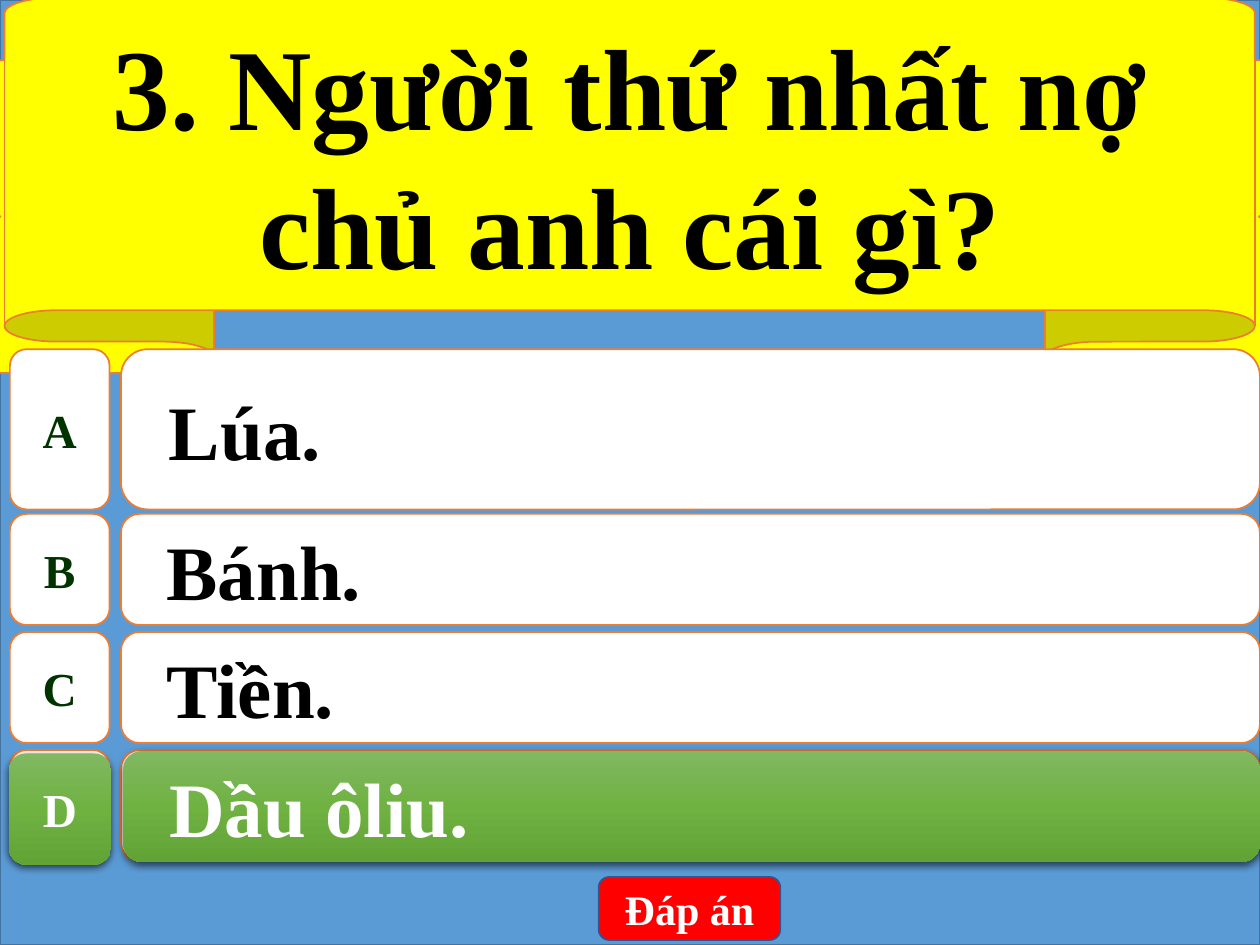
from dataclasses import dataclass

from lxml.etree import SubElement
from pptx import Presentation
from pptx.dml.color import RGBColor
from pptx.enum.shapes import MSO_SHAPE
from pptx.enum.text import MSO_ANCHOR, PP_ALIGN
from pptx.oxml.ns import qn
from pptx.util import Cm, Pt


@dataclass(frozen=True)
class Theme:
    font: str = "Times New Roman"
    sky: str = "5B9BD5"
    sky_edge: str = "43739E"
    yellow: str = "FFFF00"
    orange: str = "ED7D31"
    white: str = "FFFFFF"
    black: str = "000000"
    dark_green: str = "003300"
    red: str = "FF0000"
    button_edge: str = "325491"
    greens: tuple = ((0, "81B861"), (50, "6FB242"), (100, "62A336"))
    question_size: int = 66
    answer_size: int = 44
    letter_size: int = 27
    button_size: int = 24


class QuizSlide:
    def __init__(self, slide, theme):
        self.slide = slide
        self.theme = theme

    def shape(self, kind, box, fill, line=None, adjustments=()):
        sp = self.slide.shapes.add_shape(kind, *(Cm(v) for v in box))
        sp.shadow.inherit = False
        for i, value in enumerate(adjustments):
            sp.adjustments[i] = value
        sp.fill.solid()
        sp.fill.fore_color.rgb = RGBColor.from_string(fill)
        if line:
            sp.line.color.rgb = RGBColor.from_string(line)
            sp.line.width = Pt(1)
        else:
            sp.line.fill.background()
        return sp

    def label(self, sp, text, size, color, align=PP_ALIGN.CENTER, wrap=True):
        tf = sp.text_frame
        tf.text = text
        tf.word_wrap = wrap
        tf.vertical_anchor = MSO_ANCHOR.MIDDLE
        p = tf.paragraphs[0]
        p.alignment = align
        for r in p.runs:
            r.font.name = self.theme.font
            r.font.size = Pt(size)
            r.font.bold = True
            r.font.color.rgb = RGBColor.from_string(color)
        return p

    def background(self, width, height):
        t = self.theme
        self.shape(MSO_SHAPE.RECTANGLE, (0, 0, width, height), t.sky, t.sky_edge)

    def question(self, box, text):
        t = self.theme
        sp = self.shape(MSO_SHAPE.UP_RIBBON, box, t.yellow, t.orange, (0.167, 0.745))
        self.label(sp, text, t.question_size, t.black)

    def letter(self, box, text, lit=False):
        t = self.theme
        sp = self.shape(MSO_SHAPE.FLOWCHART_ALTERNATE_PROCESS, box,
                        t.white, None if lit else t.orange)
        if lit:
            self.glow(sp)
        if text:
            self.label(sp, text, t.letter_size, t.white if lit else t.dark_green,
                       wrap=False)

    def answer(self, box, text, lit=False):
        t = self.theme
        sp = self.shape(MSO_SHAPE.ROUNDED_RECTANGLE, box,
                        t.white, None if lit else t.orange, (0.167,))
        if lit:
            self.glow(sp)
        if text:
            p = self.label(sp, text, t.answer_size, t.white if lit else t.black,
                           PP_ALIGN.LEFT)
            p.level = 1
            pPr = p._p.get_or_add_pPr()
            pPr.set("marL", str(Cm(1.27)))
            pPr.set("indent", str(Cm(-0.71)))

    def glow(self, sp):
        sp.fill.gradient()
        sp.fill.gradient_angle = 270
        spPr = sp._element.spPr
        stops = spPr.find(qn("a:gradFill")).find(qn("a:gsLst"))
        for gs in list(stops):
            stops.remove(gs)
        for pos, color in self.theme.greens:
            gs = SubElement(stops, qn("a:gs"), pos=str(pos * 1000))
            SubElement(gs, qn("a:srgbClr"), val=color)
        shadow = SubElement(spPr.find(qn("a:effectLst")), qn("a:outerShdw"),
                            blurRad=str(Pt(4.5)), dist=str(Pt(1.5)),
                            dir="5400000", algn="ctr", rotWithShape="0")
        clr = SubElement(shadow, qn("a:srgbClr"), val=self.theme.black)
        SubElement(clr, qn("a:alpha"), val="63000")

    def button(self, box, text):
        t = self.theme
        sp = self.shape(MSO_SHAPE.ROUNDED_RECTANGLE, box, t.red, t.button_edge)
        self.label(sp, text, t.button_size, t.white)


def main():
    prs = Presentation()
    prs.slide_width, prs.slide_height = Cm(25.4), Cm(19.05)
    s = QuizSlide(prs.slides.add_slide(prs.slide_layouts[6]), Theme())

    s.background(25.4, 19.05)
    s.question((-4.22, -0.05, 33.83, 7.57), "3. Người thứ nhất nợ chủ anh cái gì?")

    first, pitch, height = 10.36, 2.38, 2.24
    rows = [("A", "Lúa.", 7.04, 3.23)]
    choices = (("B", "Bánh."), ("C", "Tiền."), ("", ""))
    rows += [(letter, answer, first + i * pitch, height)
             for i, (letter, answer) in enumerate(choices)]
    for letter, answer, top, row_height in rows:
        s.letter((0.2, top, 2.01, row_height), letter)
        s.answer((2.44, top, 22.96, row_height), answer)

    s.letter((0.18, 15.19, 2.06, height), "D", lit=True)
    s.answer((2.49, 15.14, 22.91, height), "Dầu ôliu.", lit=True)
    s.button((12.07, 17.68, 3.66, 1.27), "Đáp án")

    prs.save("out.pptx")


if __name__ == "__main__":
    main()
